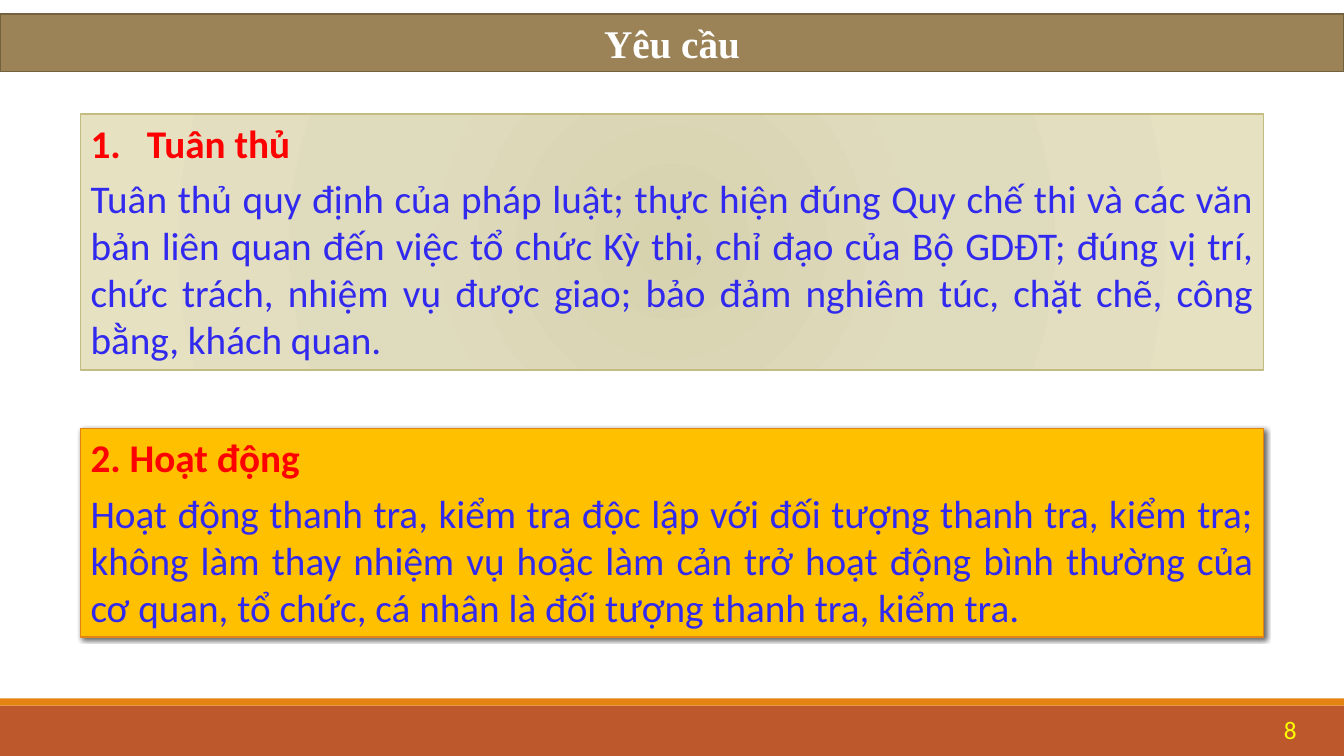
from lxml import etree
from pptx import Presentation
from pptx.dml.color import RGBColor
from pptx.enum.shapes import MSO_SHAPE
from pptx.enum.text import MSO_ANCHOR, PP_ALIGN
from pptx.oxml import parse_xml
from pptx.oxml.ns import nsdecls, qn
from pptx.util import Inches, Pt

RECT = MSO_SHAPE.RECTANGLE
TOP, MIDDLE = MSO_ANCHOR.TOP, MSO_ANCHOR.MIDDLE
CENTER, RIGHT, JUSTIFY = PP_ALIGN.CENTER, PP_ALIGN.RIGHT, PP_ALIGN.JUSTIFY

W, H = 13.33, 7.5
MARGIN = 0.8
FOOTER_H, STRIPE_H = 0.5, 0.07
HEAD, BODY = "FF0000", "3129EE"

TITLE = "Yêu cầu"
PAGE = "8"
CARDS = [
    {"top": 1.13, "height": 2.54, "fill": "DFDBBD", "line": "C2BC80", "number": "1.",
     "head": "Tuân thủ",
     "body": "Tuân thủ quy định của pháp luật; thực hiện đúng Quy chế thi và các văn bản "
             "liên quan đến việc tổ chức Kỳ thi, chỉ đạo của Bộ GDĐT; đúng vị trí, chức trách, "
             "nhiệm vụ được giao; bảo đảm nghiêm túc, chặt chẽ, công bằng, khách quan.",
     "gradient": [(0, "D7D3AF"), (45, "DFDBBD"), (100, "E5E1C1")]},
    {"top": 4.25, "height": 2.07, "fill": "FFC000", "line": "E48312", "shadow": True,
     "head": "2. Hoạt động",
     "body": "Hoạt động thanh tra, kiểm tra độc lập với đối tượng thanh tra, kiểm tra; "
             "không làm thay nhiệm vụ hoặc làm cản trở hoạt động bình thường của cơ quan, "
             "tổ chức, cá nhân là đối tượng thanh tra, kiểm tra."},
]


def rgb(value):
    return RGBColor.from_string(value)


def add_rect(left, top, width, height, fill, line=None, weight=1):
    sp = slide.shapes.add_shape(RECT, Inches(left), Inches(top), Inches(width), Inches(height))
    sp.shadow.inherit = False
    sp.fill.solid()
    sp.fill.fore_color.rgb = rgb(fill)
    if line:
        sp.line.color.rgb = rgb(line)
        sp.line.width = Pt(weight)
    else:
        sp.line.fill.background()
    return sp


def write(sp, paragraphs, align, anchor=TOP, font="Calibri", size=28, before=6):
    tf = sp.text_frame
    tf.word_wrap = True
    tf.vertical_anchor = anchor
    tf.text = "\n".join(text for text, color, bold in paragraphs)
    for p, (text, color, bold) in zip(tf.paragraphs, paragraphs):
        p.alignment = align
        p.space_before = Pt(before)
        f = p.runs[0].font
        f.name, f.size, f.bold = font, Pt(size), bold
        f.color.rgb = rgb(color)


def set_gradient(sp, stops):
    gs = "".join(f'<a:gs pos="{pos * 1000}"><a:srgbClr val="{color}"/></a:gs>'
                 for pos, color in stops)
    grad = parse_xml(
        f'<a:gradFill {nsdecls("a")} rotWithShape="1"><a:gsLst>{gs}</a:gsLst>'
        '<a:path path="circle"><a:fillToRect l="100000" t="100000" r="100000" b="100000"/>'
        '</a:path></a:gradFill>')
    solid = sp.element.spPr.find(qn("a:solidFill"))
    solid.getparent().replace(solid, grad)


def set_shadow(sp):
    effects = sp.element.spPr.find(qn("a:effectLst"))
    shadow = etree.SubElement(effects, qn("a:outerShdw"), blurRad=str(Pt(3)),
                              dist=str(Pt(2)), dir=str(45 * 60000), rotWithShape="0")
    color = etree.SubElement(shadow, qn("a:srgbClr"), val="000000")
    etree.SubElement(color, qn("a:alpha"), val="60000")


def set_number(p, indent=0.56):
    pPr = p._p.get_or_add_pPr()
    pPr.set("marL", str(Inches(indent)))
    pPr.set("indent", str(-Inches(indent)))
    etree.SubElement(pPr, qn("a:buFont"), typeface="+mj-lt")
    etree.SubElement(pPr, qn("a:buAutoNum"), type="arabicPeriod")


prs = Presentation()
prs.slide_width, prs.slide_height = Inches(W), Inches(H)
slide = prs.slides.add_slide(prs.slide_layouts[6])

footer_top = H - FOOTER_H
add_rect(0, footer_top, W, FOOTER_H, "BD582C")
add_rect(0, footer_top - STRIPE_H, W, STRIPE_H, "E48312")

banner = add_rect(0, 0.14, W, 0.57, "9B8357", "736140", 1.25)
write(banner, [(TITLE, "FFFFFF", True)], CENTER, font="Times New Roman")

for card in CARDS:
    sp = add_rect(MARGIN, card["top"], W - 2 * MARGIN, card["height"], card["fill"], card["line"])
    write(sp, [(card["head"], HEAD, True), (card["body"], BODY, False)], JUSTIFY)
    if "gradient" in card:
        set_gradient(sp, card["gradient"])
    if "shadow" in card:
        set_shadow(sp)
    if "number" in card:
        set_number(sp.text_frame.paragraphs[0])

page = slide.shapes.add_textbox(Inches(11.53), Inches(7.04), Inches(1.43), Inches(0.4))
write(page, [(PAGE, "FFFF00", False)], RIGHT, MIDDLE, size=18, before=0)

prs.save("out.pptx")
